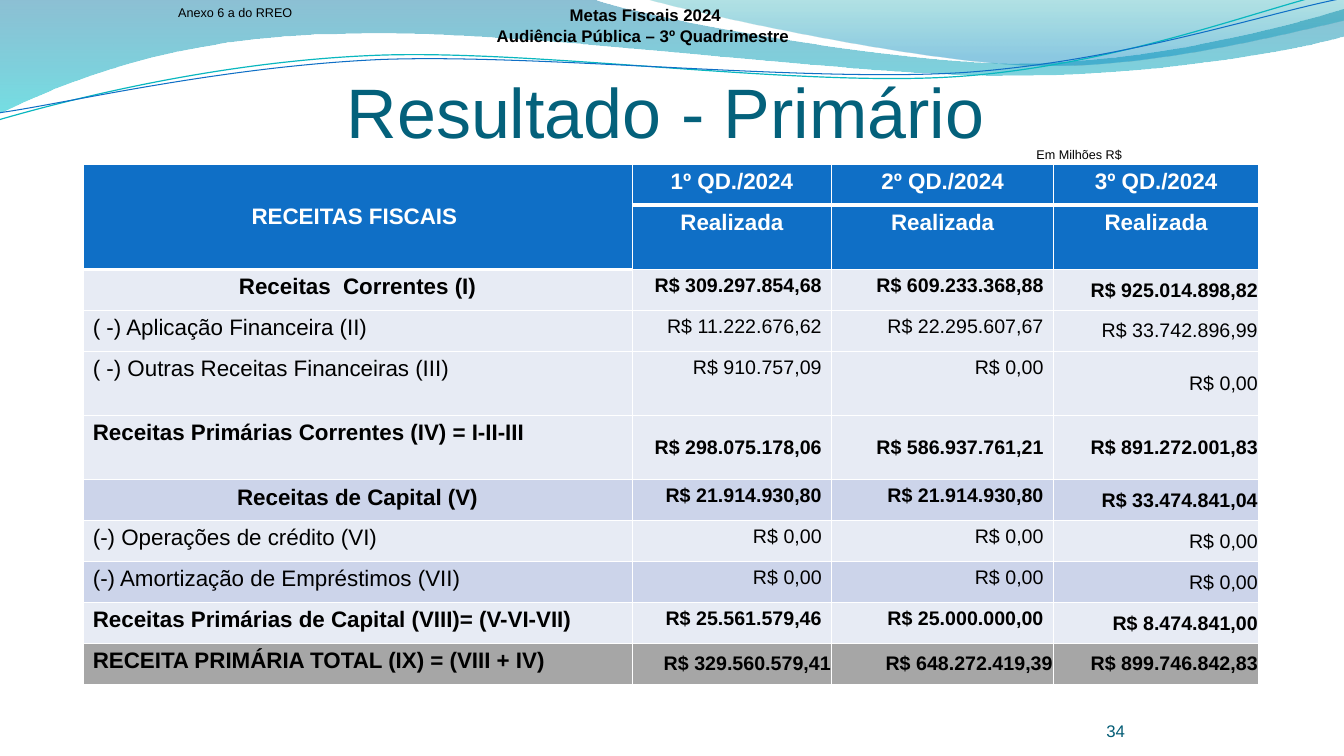
"""Build the slide on the primary result of the 2024 fiscal targets."""
from lxml import etree
from pptx import Presentation
from pptx import util as u
from pptx.dml.color import RGBColor
from pptx.enum import text
from pptx.oxml.ns import qn

WHITE = RGBColor(0xFF, 0xFF, 0xFF)
BLACK = RGBColor(0x00, 0x00, 0x00)
HEADER_BLUE = RGBColor(0x0F, 0x6F, 0xC6)
PALE = RGBColor(0xE7, 0xEB, 0xF4)
LAVENDER = RGBColor(0xCC, 0xD4, 0xEA)
GREY = RGBColor(0xA6, 0xA6, 0xA6)
TITLE_TEAL = RGBColor(0x04, 0x61, 0x7B)
NUMBER_TEAL = RGBColor(0x03, 0x5C, 0x75)
WAVE_TEAL = RGBColor(0x09, 0xB7, 0xBF)
BAND_BLUE = RGBColor(0x00, 0x74, 0xA0)
BAND_CYAN = RGBColor(0x00, 0xC4, 0xCD)
BAND_SKY = RGBColor(0x00, 0x8A, 0xBF)
BAND_GREEN = RGBColor(0x00, 0xA0, 0xA8)

LEFT, CENTER, RIGHT, JUSTIFY = (text.PP_ALIGN.LEFT, text.PP_ALIGN.CENTER,
                                text.PP_ALIGN.RIGHT, text.PP_ALIGN.JUSTIFY)
TOP, MIDDLE, BOTTOM = (text.MSO_ANCHOR.TOP, text.MSO_ANCHOR.MIDDLE,
                       text.MSO_ANCHOR.BOTTOM)

presentation = Presentation()
presentation.slide_width, presentation.slide_height = u.Cm(33.87), u.Cm(19.05)
slide = presentation.slides.add_slide(presentation.slide_layouts[6])


def draw_outline(start, segments, closed):
    """Draw straight (2 numbers) and cubic (6 numbers) segments, in cm."""
    corners = [(u.Cm(segment[i]), u.Cm(segment[i + 1]))
               for segment in segments for i in range(0, len(segment), 2)]
    builder = slide.shapes.build_freeform(u.Cm(start[0]), u.Cm(start[1]))
    builder.add_line_segments(corners, close=closed)
    shape = builder.convert_to_shape()
    shape.shadow.inherit = False
    lines = iter(list(shape._element.spPr.iter(qn("a:lnTo"))))
    for segment in segments:
        first = next(lines)
        if len(segment) == 6:
            first.tag = qn("a:cubicBezTo")
            for line in (next(lines), next(lines)):
                first.append(line[0])
                line.getparent().remove(line)
    return shape


def format_text(frame, align, size, color, bold):
    """Format every paragraph of a text frame."""
    for paragraph in frame.paragraphs:
        paragraph.alignment = align
        for run in paragraph.runs:
            run.font.name, run.font.size = "Arial", u.Pt(size)
            run.font.bold, run.font.color.rgb = bold, color


bands = [
    ((0, 0), [(14.91, -0.03), (16.1, 0.43, 22.48, 1.6, 25.68, 1.6),
              (28.88, 1.6, 32.46, 0.66, 33.86, 0.23), (33.91, 0.91),
              (33.3, 1.12, 29.46, 1.93, 25.25, 1.91),
              (21.06, 1.91, 12.93, 0.71, 8.71, 0.86),
              (4.37, 0.89, 1.55, 2.11, -0.03, 2.87)],
     270, [(0, BAND_BLUE, 45), (1, BAND_CYAN, 55)]),
    ((16.23, -0.03), [(17.25, 0.28, 23.09, 1.57, 26.04, 1.65),
                      (28.98, 1.75, 32.56, 0.81, 33.86, 0.53), (33.86, 0)],
     90, [(0.2, BAND_SKY, 45), (1, BAND_GREEN, 30)]),
]
for start, segments, angle, stops in bands:
    band = draw_outline(start, segments, True)
    band.line.fill.background()
    band.fill.gradient()
    band.fill.gradient_angle = angle
    for stop, (position, color, _) in zip(band.fill.gradient_stops, stops):
        stop.position, stop.color.rgb = position, color
    for element, (_, _, opacity) in zip(band._element.spPr.iter(qn("a:srgbClr")), stops):
        etree.SubElement(element, qn("a:alpha"), val=str(opacity * 1000))

waves = [
    ((-0.03, 3.02), [(1.63, 2.54, 5.36, 1.57, 9.37, 1.4),
                     (13.39, 1.22, 20.07, 2.21, 24.13, 1.93),
                     (28.19, 1.65, 31.8, 0.2, 33.81, -0.25)], WAVE_TEAL, 0.85),
    ((0, 2.84), [(1.6, 2.62, 5.54, 1.68, 9.6, 1.5),
                 (13.64, 1.35, 20.22, 2.08, 24.26, 1.83),
                 (28.32, 1.55, 31.88, 0.33, 33.88, -0.05)], HEADER_BLUE, 0.75),
]
for start, segments, color, width in waves:
    wave = draw_outline(start, segments, False)
    wave.fill.background()
    wave.line.color.rgb, wave.line.width = color, u.Pt(width)

rows = [
    (["RECEITAS FISCAIS ", "1º QD./2024", "2º QD./2024", "3º QD./2024"],
     HEADER_BLUE, CENTER, True),
    (["", "Realizada", "Realizada", "Realizada"], HEADER_BLUE, CENTER, True),
    (["Receitas  Correntes (I)", "R$ 309.297.854,68", "R$ 609.233.368,88",
      "R$ 925.014.898,82"], PALE, CENTER, True),
    (["( -) Aplicação Financeira (II)", "R$ 11.222.676,62", "R$ 22.295.607,67",
      "R$ 33.742.896,99"], PALE, JUSTIFY, False),
    (["( -) Outras Receitas Financeiras (III)", " R$ 910.757,09", " R$ 0,00", "R$ 0,00"],
     PALE, JUSTIFY, False),
    (["Receitas Primárias Correntes (IV) = I-II-III", "R$ 298.075.178,06",
      "R$ 586.937.761,21", "R$ 891.272.001,83"], PALE, JUSTIFY, True),
    (["Receitas de Capital (V)", "R$ 21.914.930,80", "R$ 21.914.930,80",
      "R$ 33.474.841,04"], LAVENDER, CENTER, True),
    (["(-) Operações de crédito (VI)", "R$ 0,00", "R$ 0,00", "R$ 0,00"],
     PALE, LEFT, False),
    (["(-) Amortização de Empréstimos (VII)", "R$ 0,00", "R$ 0,00", "R$ 0,00"],
     LAVENDER, LEFT, False),
    (["Receitas Primárias de Capital (VIII)= (V-VI-VII)", "R$ 25.561.579,46",
      "R$ 25.000.000,00", "R$ 8.474.841,00"], PALE, LEFT, True),
    (["RECEITA PRIMÁRIA TOTAL (IX) = (VIII + IV)", "R$ 329.560.579,41",
      "R$ 648.272.419,39", "R$ 899.746.842,83"], GREY, LEFT, True),
]
HEADER_ROWS, TALL_ROWS, SUBTOTAL, TOTAL = 2, (1, 4, 5), 5, 10
DEFAULT_MARGINS = (0.25, 0.13, 0.25, 0.13)

table = slide.shapes.add_table(len(rows), 4, u.Cm(2.09), u.Cm(4.14),
                               u.Cm(29.63), u.Cm(13.1)).table
for column, width in zip(table.columns, (13.84, 5.03, 5.59, 5.17)):
    column.width = u.Cm(width)
table.cell(0, 0).merge(table.cell(1, 0))

for r, (labels, fill, label_align, bold) in enumerate(rows):
    table.rows[r].height = u.Cm(1.62 if r in TALL_ROWS else 1.03)
    for c, label in enumerate(labels):
        cell = table.cell(r, c)
        cell.text_frame.text = label
        is_amount = r >= HEADER_ROWS and c > 0
        anchor, margins = TOP, DEFAULT_MARGINS
        if is_amount and c == 3:
            anchor, margins = MIDDLE, (0.02, 0.02, 0.02, 0)
        elif is_amount and r == TOTAL:
            anchor, margins = MIDDLE, (0.02, 0.13, 0.02, 0.13)
        elif (is_amount and r == SUBTOTAL) or (r, c) == (0, 0):
            anchor = MIDDLE
        format_text(cell.text_frame, RIGHT if is_amount else label_align,
                    14 if is_amount else 16, WHITE if r < HEADER_ROWS else BLACK, bold)
        cell.vertical_anchor = anchor
        (cell.margin_left, cell.margin_top,
         cell.margin_right, cell.margin_bottom) = map(u.Cm, margins)
        thick_row = 2 if c == 0 else 1
        widths = {"lnL": 0.96, "lnR": 0.96, "lnT": 3 if r == thick_row else 0.96,
                  "lnB": 3 if r == thick_row - 1 or (r, c) == (0, 0) else 0.96}
        for side, width in widths.items():
            border = etree.SubElement(cell._tc.get_or_add_tcPr(), qn(f"a:{side}"),
                                      w=str(u.Pt(width)))
            solid = etree.SubElement(border, qn("a:solidFill"))
            etree.SubElement(solid, qn("a:srgbClr"), val=str(WHITE))
        cell.fill.solid()
        cell.fill.fore_color.rgb = fill

captions = [
    ("34", (26.24, 17.65, 2.11, 1.02), RIGHT, 12, NUMBER_TEAL, False, BOTTOM,
     (0, 0, 0, 0), True),
    ("Em Milhões R$", (25.86, 3.58, 2.67, 0.64), CENTER, 9, BLACK, False, TOP,
     DEFAULT_MARGINS, False),
    ("Anexo 6 a do RREO", (4.24, 0, 3.45, 0.64), LEFT, 9, BLACK, False, TOP,
     DEFAULT_MARGINS, False),
    ("Metas Fiscais 2024\nAudiência Pública – 3º Quadrimestre ", (11.96, 0, 8.61, 1.28),
     CENTER, 12, BLACK, True, MIDDLE, DEFAULT_MARGINS, True),
    ("Resultado - Primário", (5.35, 1.12, 22.86, 3.18), CENTER, 50, TITLE_TEAL, False,
     MIDDLE, (0, 0.13, 0, 0), True),
]
for caption, place, align, size, color, bold, anchor, margins, wrap in captions:
    frame = slide.shapes.add_textbox(*map(u.Cm, place)).text_frame
    frame.text = caption
    frame.word_wrap = wrap
    frame.vertical_anchor = anchor
    (frame.margin_left, frame.margin_top,
     frame.margin_right, frame.margin_bottom) = map(u.Cm, margins)
    format_text(frame, align, size, color, bold)

presentation.save("out.pptx")
